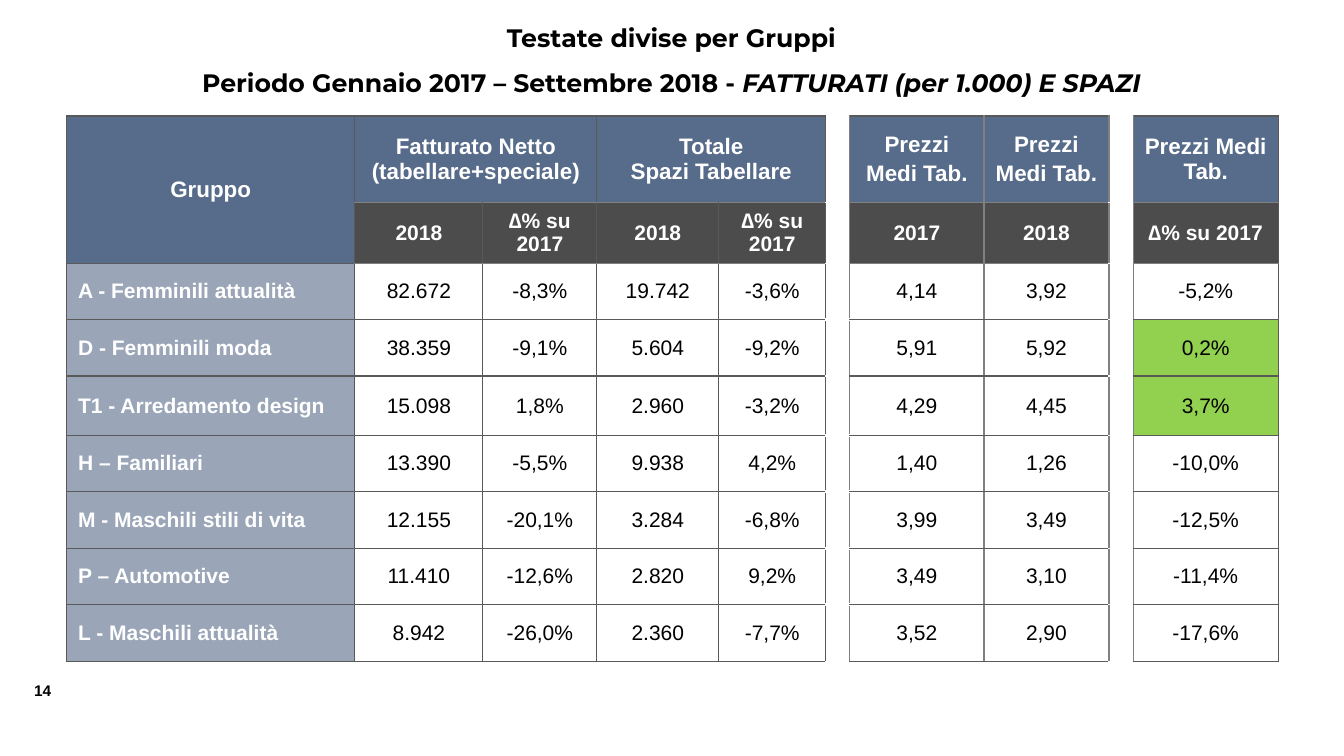
from typing import NamedTuple, Optional

from lxml import etree
from pptx import Presentation
from pptx import table as tables
from pptx import util as u
from pptx.dml import color
from pptx.enum import text
from pptx.oxml import ns

# The slide is divided into a fine grid of columns and rows.
GRID_COLUMNS, GRID_ROWS = 1333, 750
SLIDE_WIDTH, SLIDE_HEIGHT = u.Inches(13.33), u.Inches(7.5)

BLUE, BLACK, WHITE, GREEN = "576B8A", "000000", "FFFFFF", "92D050"
DARK_RULE, GREY_RULE = "595959", "808080"

COLUMN_WIDTHS = (286, 127, 113, 121, 106, 24, 133, 124, 24, 144)
ROW_HEIGHTS = (86, 60, 56, 56, 59, 56, 56, 56, 56)
GAP_COLUMNS = (5, 8)
HEADER_ROWS = 2
LAST_ROW = len(ROW_HEIGHTS) - 1


class CellLook(NamedTuple):
    size: float
    ink: str
    bold: bool
    fill: Optional[str]
    opacity: int = 100
    margin_x: float = 0
    margin_y: float = 0
    align: text.PP_ALIGN = text.PP_ALIGN.CENTER
    space_between: float = 0


class Heading(NamedTuple):
    column: int
    label: str
    rows: int = 1
    columns: int = 1
    space_between: float = 0


class Group(NamedTuple):
    name: str
    revenue: str
    revenue_change: str
    space: str
    space_change: str
    price_2017: str
    price_2018: str
    price_change: str


HEADING = CellLook(16, WHITE, True, BLUE, margin_x=10, margin_y=5)
SUBHEADING = HEADING._replace(size=15, fill=BLACK, opacity=70)
GROUP_NAME = CellLook(15, WHITE, True, BLUE, 60, margin_x=11.5, align=text.PP_ALIGN.LEFT)
FIGURE = CellLook(15, BLACK, False, None)
GROWTH = FIGURE._replace(fill=GREEN)

HEADINGS = (
    Heading(0, "Gruppo", rows=2),
    Heading(1, "Fatturato Netto (tabellare+speciale)", columns=2),
    Heading(3, "Totale\nSpazi Tabellare", columns=2),
    Heading(6, "Prezzi\nMedi Tab.", space_between=3.2),
    Heading(7, "Prezzi\nMedi Tab.", space_between=3.2),
    Heading(9, "Prezzi Medi Tab."),
)
CHANGE = "∆% su 2017"
SUBHEADINGS = {1: "2018", 2: CHANGE, 3: "2018", 4: CHANGE, 6: "2017", 7: "2018", 9: CHANGE}
GROUPS = (
    Group("A - Femminili attualità", "82.672", "-8,3%", "19.742", "-3,6%", "4,14", "3,92", "-5,2%"),
    Group("D - Femminili moda", "38.359", "-9,1%", "5.604", "-9,2%", "5,91", "5,92", "0,2%"),
    Group("T1 - Arredamento design", "15.098", "1,8%", "2.960", "-3,2%", "4,29", "4,45", "3,7%"),
    Group("H – Familiari", "13.390", "-5,5%", "9.938", "4,2%", "1,40", "1,26", "-10,0%"),
    Group("M - Maschili stili di vita", "12.155", "-20,1%", "3.284", "-6,8%", "3,99", "3,49", "-12,5%"),
    Group("P – Automotive", "11.410", "-12,6%", "2.820", "9,2%", "3,49", "3,10", "-11,4%"),
    Group("L - Maschili attualità", "8.942", "-26,0%", "2.360", "-7,7%", "3,52", "2,90", "-17,6%"),
)


def across(columns: float) -> int:
    return round(SLIDE_WIDTH * columns / GRID_COLUMNS)


def down(rows: float) -> int:
    return round(SLIDE_HEIGHT * rows / GRID_ROWS)


def rgb(value: str) -> color.RGBColor:
    return color.RGBColor.from_string(value)


def format_runs(paragraph, size: float, ink: str, bold: bool, font: str = "Arial") -> None:
    for run in paragraph.runs:
        run.font.size = u.Pt(size)
        run.font.name = font
        run.font.bold = bold
        run.font.color.rgb = rgb(ink)


def paint(cell: tables._Cell, fill: Optional[str], opacity: int = 100) -> None:
    if fill is None:
        cell.fill.background()
        return
    cell.fill.solid()
    cell.fill.fore_color.rgb = rgb(fill)
    if opacity < 100:
        swatch = cell._tc.tcPr.find(".//" + ns.qn("a:srgbClr"))
        etree.SubElement(swatch, ns.qn("a:alpha"), val=str(opacity * 1000))


def write(cell: tables._Cell, label: str, look: CellLook) -> None:
    paint(cell, look.fill, look.opacity)
    cell.vertical_anchor = text.MSO_ANCHOR.MIDDLE
    cell.margin_left = cell.margin_right = across(look.margin_x)
    cell.margin_top = cell.margin_bottom = down(look.margin_y)
    cell.text_frame.text = label
    for index, paragraph in enumerate(cell.text_frame.paragraphs):
        paragraph.alignment = look.align
        if index and look.space_between:
            paragraph.space_before = u.Pt(look.space_between)
        format_runs(paragraph, look.size, look.ink, look.bold)


def horizontal_rule(row: int, column: int) -> tuple[str, float]:
    """Colour and width of the rule above a row."""
    if column in GAP_COLUMNS:
        thick = column == GAP_COLUMNS[0] and HEADER_ROWS < row <= LAST_ROW
        return WHITE, 2.25 if thick else 1
    return (GREY_RULE if column and row in (1, HEADER_ROWS) else DARK_RULE), 1


def vertical_rule(column: int) -> tuple[str, float]:
    """Colour and width of the rule to the left of a column."""
    outer = column <= GAP_COLUMNS[0] or column == len(COLUMN_WIDTHS)
    return (DARK_RULE if outer else GREY_RULE), 1


def draw_borders(cell: tables._Cell, row: int, column: int) -> None:
    edges = {
        "a:lnL": vertical_rule(column),
        "a:lnR": vertical_rule(column + 1),
        "a:lnT": horizontal_rule(row, column),
        "a:lnB": horizontal_rule(row + 1, column),
    }
    for index, (tag, (ink, width)) in enumerate(edges.items()):
        line = etree.Element(ns.qn(tag), w=str(u.Pt(width)))
        solid = etree.SubElement(line, ns.qn("a:solidFill"))
        etree.SubElement(solid, ns.qn("a:srgbClr"), val=ink)
        cell._tc.get_or_add_tcPr().insert(index, line)


def add_title(slide) -> None:
    title = slide.shapes.title
    title.left, title.top = across(111), down(2)
    title.width, title.height = across(1110), down(107)
    frame = title.text_frame
    frame.auto_size = text.MSO_AUTO_SIZE.NONE
    frame.vertical_anchor = text.MSO_ANCHOR.TOP
    frame.text = "Testate divise per Gruppi\nPeriodo Gennaio 2017 – Settembre 2018 - "
    subject = frame.paragraphs[1].add_run()
    subject.text = "FATTURATI (per 1.000) E SPAZI"
    subject.font.italic = True
    for paragraph in frame.paragraphs:
        paragraph.alignment = text.PP_ALIGN.CENTER
        paragraph.line_spacing = 1.5
        format_runs(paragraph, 18, BLACK, True, "Montserrat")


def add_page_number(slide) -> None:
    box = slide.shapes.add_textbox(across(24), down(671), across(42), down(29))
    box.text_frame.word_wrap = False
    box.text_frame.text = "14"
    format_runs(box.text_frame.paragraphs[0], 11, BLACK, True)


def add_groups_table(slide) -> None:
    grid = slide.shapes.add_table(
        len(ROW_HEIGHTS), len(COLUMN_WIDTHS), across(66), down(115),
        across(sum(COLUMN_WIDTHS)), down(sum(ROW_HEIGHTS))).table
    grid.first_row = grid.horz_banding = False
    for column, width in zip(grid.columns, COLUMN_WIDTHS):
        column.width = across(width)
    for row, height in zip(grid.rows, ROW_HEIGHTS):
        row.height = down(height)

    for heading in HEADINGS:
        cell = grid.cell(0, heading.column)
        if heading.rows * heading.columns > 1:
            cell.merge(grid.cell(heading.rows - 1, heading.column + heading.columns - 1))
        write(cell, heading.label, HEADING._replace(space_between=heading.space_between))
    for column, label in SUBHEADINGS.items():
        write(grid.cell(1, column), label, SUBHEADING)

    value_columns = [c for c in range(len(COLUMN_WIDTHS)) if c not in GAP_COLUMNS]
    for row, group in enumerate(GROUPS, HEADER_ROWS):
        for column, value in zip(value_columns, group):
            write(grid.cell(row, column), value, FIGURE if column else GROUP_NAME)
        if not group.price_change.startswith("-"):
            write(grid.cell(row, value_columns[-1]), group.price_change, GROWTH)

    for row in range(len(ROW_HEIGHTS)):
        for column in GAP_COLUMNS:
            paint(grid.cell(row, column), WHITE)
        for column in range(len(COLUMN_WIDTHS)):
            draw_borders(grid.cell(row, column), row, column)


def main() -> None:
    deck = Presentation()
    deck.slide_width, deck.slide_height = SLIDE_WIDTH, SLIDE_HEIGHT
    slide = deck.slides.add_slide(deck.slide_layouts[5])
    add_page_number(slide)
    add_title(slide)
    add_groups_table(slide)
    deck.save("out.pptx")


if __name__ == "__main__":
    main()
